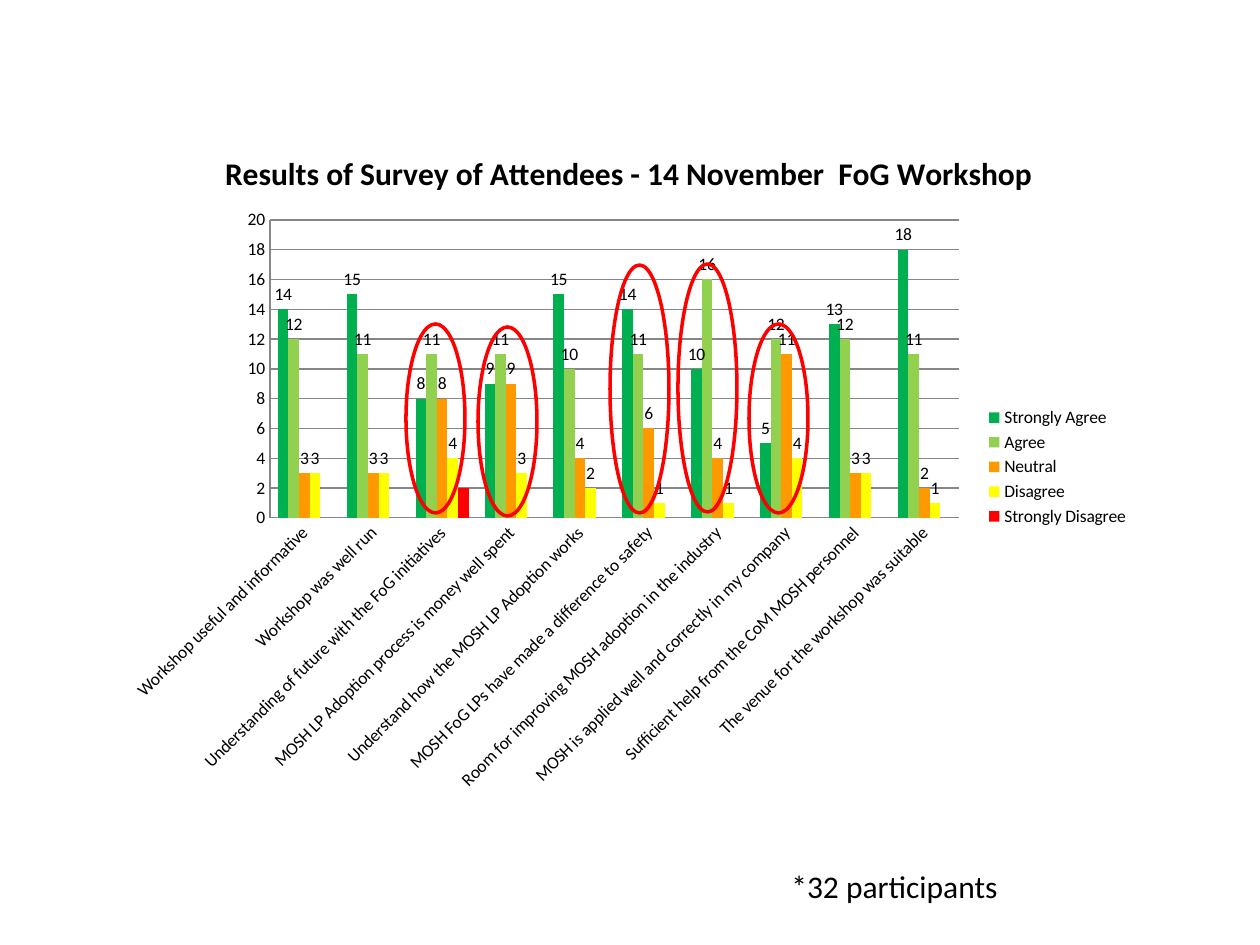
from typing import NamedTuple, Optional

from lxml import etree
from pptx import Presentation
from pptx.chart.data import CategoryChartData
from pptx.dml.color import RGBColor
from pptx.enum.chart import XL_CHART_TYPE as ChartType
from pptx.enum.chart import XL_LABEL_POSITION as LabelPos
from pptx.enum.chart import XL_LEGEND_POSITION as LegendPos
from pptx.enum.chart import XL_TICK_MARK as Tick
from pptx.enum.shapes import MSO_SHAPE as Shape
from pptx.enum.text import MSO_AUTO_SIZE as AutoSize
from pptx.oxml.ns import qn
from pptx.util import Pt

PX = 914400 // 126
FONT = "Calibri"
BLACK, RED, GREY = "000000", "FF0000", "868686"


class Box(NamedTuple):
    x: int
    y: int
    w: int
    h: int

    def emu(self) -> list[int]:
        return [v * PX for v in self]


class Series(NamedTuple):
    name: str
    color: str
    values: list[Optional[int]]


CHART = Box(116, 126, 1026, 682)
PLOT = Box(270, 220, 689, 298)
QUESTIONS = [
    "Workshop useful and informative",
    "Workshop was well run",
    "Understanding of future with the FoG initiatives",
    "MOSH LP Adoption process is money well spent",
    "Understand how the MOSH LP Adoption works",
    "MOSH FoG LPs have made a difference to safety",
    "Room for improving MOSH adoption in the industry",
    "MOSH is applied well and correctly in my company",
    "Sufficient help from the CoM MOSH personnel",
    "The venue for the workshop was suitable",
]
ANSWERS = [
    Series("Strongly Agree", "00B050", [14, 15, 8, 9, 15, 14, 10, 5, 13, 18]),
    Series("Agree", "92D050", [12, 11, 11, 11, 10, 11, 16, 12, 12, 11]),
    Series("Neutral", "FF9900", [3, 3, 8, 9, 4, 6, 4, 11, 3, 2]),
    Series("Disagree", "FFFF00", [3, 3, 4, 3, 2, 1, 1, 4, 3, 1]),
    Series("Strongly Disagree", RED, [None, None, 2] + [None] * 7),
]
HIGHLIGHTS = [
    Box(406, 324, 59, 189),
    Box(478, 327, 59, 189),
    Box(678, 264, 59, 248),
    Box(749, 324, 59, 189),
    Box(610, 265, 59, 248),
]


def rgb(color: str) -> RGBColor:
    return RGBColor.from_string(color)


def format_font(font, size: float, color: str = BLACK, bold: bool = False) -> None:
    font.name, font.size, font.bold = FONT, Pt(size), bold
    font.color.rgb = rgb(color)


def write(tf, text: str, **fmt) -> None:
    r = tf.paragraphs[0].add_run()
    r.text = text
    format_font(r.font, **fmt)


def place_plot(chart) -> None:
    """Pin the inner plot area as fractions of the chart frame."""
    plot_area = chart.plots[0]._element.getparent()
    for old in plot_area.findall(qn("c:layout")):
        plot_area.remove(old)
    layout = etree.Element(qn("c:layout"))
    manual = etree.SubElement(layout, qn("c:manualLayout"))
    settings = {
        "layoutTarget": "inner", "xMode": "edge", "yMode": "edge",
        "x": round((PLOT.x - CHART.x) / CHART.w, 4),
        "y": round((PLOT.y - CHART.y) / CHART.h, 4),
        "w": round(PLOT.w / CHART.w, 4),
        "h": round(PLOT.h / CHART.h, 4),
    }
    for tag, val in settings.items():
        etree.SubElement(manual, qn(f"c:{tag}")).set("val", str(val))
    plot_area.insert(0, layout)


def add_survey_chart(s) -> None:
    data = CategoryChartData()
    data.categories = QUESTIONS
    for answer in ANSWERS:
        data.add_series(answer.name, answer.values)
    chart = s.shapes.add_chart(ChartType.COLUMN_CLUSTERED, *CHART.emu(), data).chart
    format_font(chart.font, 10)
    chart.has_title = True
    write(chart.chart_title.text_frame,
          "Results of Survey of Attendees - 14 November  FoG Workshop",
          size=18, bold=True)
    chart.chart_title.include_in_layout = False
    chart.has_legend = True
    chart.legend.position = LegendPos.RIGHT
    chart.legend.include_in_layout = False

    # Columns and value labels
    plot = chart.plots[0]
    plot.gap_width, plot.overlap, plot.vary_by_categories = 150, 0, False
    for series, answer in zip(plot.series, ANSWERS):
        series.format.fill.solid()
        series.format.fill.fore_color.rgb = rgb(answer.color)
        series.invert_if_negative = False
        if None not in answer.values:
            labels = series.data_labels
            labels.show_value = True
            labels.position = LabelPos.OUTSIDE_END
            format_font(labels.font, 10)

    # Axes, with slanted question labels
    cat_axis, val_axis = chart.category_axis, chart.value_axis
    for axis in (cat_axis, val_axis):
        axis.major_tick_mark = axis.minor_tick_mark = Tick.NONE
        axis.format.line.color.rgb = rgb(GREY)
        format_font(axis.tick_labels.font, 10)
    body = cat_axis._element.find(qn("c:txPr")).find(qn("a:bodyPr"))
    body.set("rot", str(-45 * 60000))
    body.set("vert", "horz")
    val_axis.minimum_scale, val_axis.maximum_scale, val_axis.major_unit = 0, 20, 2
    val_axis.has_major_gridlines = True
    val_axis.major_gridlines.format.line.color.rgb = rgb(GREY)
    place_plot(chart)


def add_highlight(s, box: Box) -> None:
    sp = s.shapes.add_shape(Shape.OVAL, *box.emu())
    sp.shadow.inherit = False
    sp.fill.background()
    sp.line.color.rgb = rgb(RED)
    sp.line.width = Pt(2)


def add_note(s, box: Box, text: str) -> None:
    tf = s.shapes.add_textbox(*box.emu()).text_frame
    tf.word_wrap = False
    tf.auto_size = AutoSize.SHAPE_TO_FIT_TEXT
    write(tf, text, size=18)


def main() -> None:
    prs = Presentation()
    prs.slide_width, prs.slide_height = 1260 * PX, 945 * PX
    s = prs.slides.add_slide(prs.slide_layouts[6])
    add_survey_chart(s)
    for box in HIGHLIGHTS:
        add_highlight(s, box)
    add_note(s, Box(779, 861, 234, 50), "*32 participants")
    prs.save("out.pptx")


if __name__ == "__main__":
    main()
